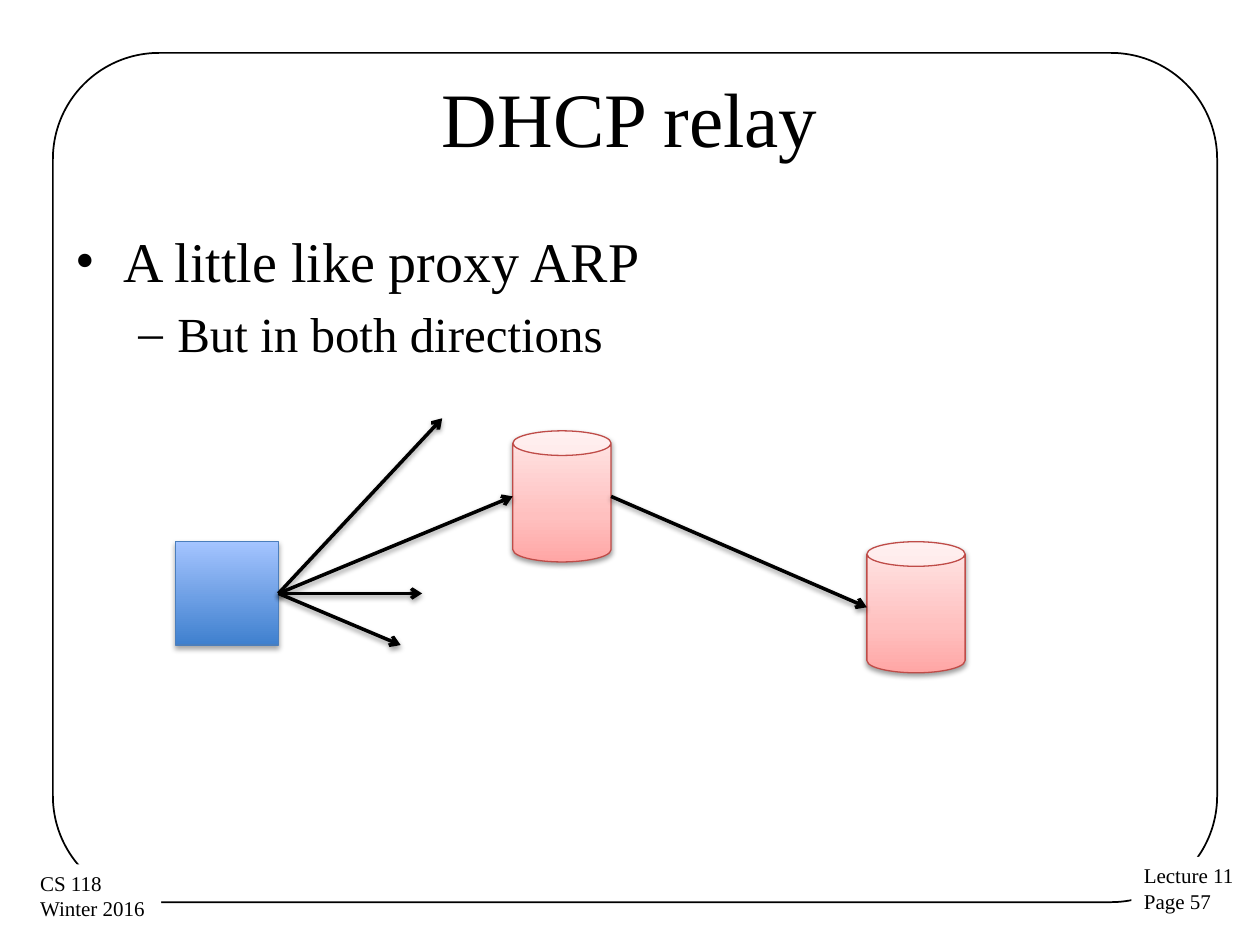
from dataclasses import dataclass

import lxml.etree
import pptx
import pptx.dml.color
import pptx.enum.shapes
import pptx.enum.text
import pptx.oxml.ns
import pptx.util
from pptx.util import Inches

RGBColor = pptx.dml.color.RGBColor
ShapeKind = pptx.enum.shapes.MSO_SHAPE
qn = pptx.oxml.ns.qn

BLACK = RGBColor(0x00, 0x00, 0x00)
WHITE = RGBColor(0xFF, 0xFF, 0xFF)
CLIENT_LINE = RGBColor(0x4B, 0x7E, 0xBC)
SERVER_LINE = RGBColor(0xBF, 0x4C, 0x48)
CLIENT_STOPS = ((0, RGBColor(0x3F, 0x80, 0xCE)), (100, RGBColor(0xA4, 0xC4, 0xFF)))
SERVER_STOPS = (
    (0, RGBColor(0xFF, 0xA6, 0xA5)),
    (35, RGBColor(0xFF, 0xC0, 0xBF)),
    (100, RGBColor(0xFF, 0xE7, 0xE7)),
)
FONT = "Times New Roman"


@dataclass(frozen=True)
class Node:
    kind: int
    left: float
    top: float
    width: float
    height: float
    stops: tuple
    line: RGBColor
    shadow_opacity: int
    shadow_distance: float

    @property
    def left_side(self) -> tuple[float, float]:
        return self.left, self.top + self.height / 2

    @property
    def right_side(self) -> tuple[float, float]:
        return self.left + self.width, self.top + self.height / 2


@dataclass(frozen=True)
class Label:
    left: float
    top: float
    width: float
    lines: tuple[str, ...]


@dataclass(frozen=True)
class Bullet:
    text: str
    size: int
    symbol: str
    margin: float
    indent: float
    level: int


def server(left: float, top: float) -> Node:
    return Node(ShapeKind.CAN, left, top, 0.78, 1.04, SERVER_STOPS, SERVER_LINE, 38, 1.6)


CLIENT = Node(ShapeKind.RECTANGLE, 1.39, 4.3, 0.82, 0.82, CLIENT_STOPS, CLIENT_LINE, 35, 1.8)
RELAY = server(4.07, 3.42)
DHCP_SERVER = server(6.88, 4.3)
BROADCAST_ENDS = ((3.51, 3.32), RELAY.left_side, (3.18, 5.12), (3.35, 4.71))
ARROWS = [(CLIENT.right_side, end) for end in BROADCAST_ENDS]
ARROWS.append((RELAY.right_side, DHCP_SERVER.left_side))
LABELS = (
    Label(8.98, 6.8, 0.92, ("Lecture 11", "Page 57")),
    Label(0.22, 6.86, 1.06, ("CS 118", "Winter 2016")),
)
BULLETS = (
    Bullet("A little like proxy ARP", 32, "•", 0.38, -0.38, 0),
    Bullet("But in both directions", 28, "–", 0.81, -0.31, 1),
)


def add_run(paragraph, text: str, size: int) -> None:
    run = paragraph.add_run()
    run.text = text
    run.font.name = FONT
    run.font.size = pptx.util.Pt(size)
    run.font.color.rgb = BLACK


def next_paragraph(frame, index: int):
    return frame.add_paragraph() if index else frame.paragraphs[0]


def add_color(parent, color: RGBColor):
    return lxml.etree.SubElement(parent, qn("a:srgbClr"), val=str(color))


def add_shadow(effects, opacity: int, distance: float) -> None:
    shadow = lxml.etree.SubElement(
        effects, qn("a:outerShdw"), blurRad=str(pptx.util.Pt(3.1)),
        dist=str(pptx.util.Pt(distance)), dir="5400000", rotWithShape="0")
    color = add_color(shadow, BLACK)
    lxml.etree.SubElement(color, qn("a:alpha"), val=str(opacity * 1000))


def add_frame(slide) -> None:
    shape = slide.shapes.add_shape(
        ShapeKind.ROUNDED_RECTANGLE, Inches(0.42), Inches(0.42), Inches(9.24), Inches(6.74))
    shape.adjustments[0] = 0.125
    shape.shadow.inherit = False
    shape.fill.background()
    shape.line.color.rgb = BLACK
    shape.line.width = pptx.util.Pt(1)


def add_label(slide, label: Label) -> None:
    shape = slide.shapes.add_textbox(
        Inches(label.left), Inches(label.top), Inches(label.width), Inches(0.51))
    shape.fill.solid()
    shape.fill.fore_color.rgb = WHITE
    frame = shape.text_frame
    frame.word_wrap = False
    frame.auto_size = pptx.enum.text.MSO_AUTO_SIZE.SHAPE_TO_FIT_TEXT
    for index, line in enumerate(label.lines):
        add_run(next_paragraph(frame, index), line, 12)


def add_title(slide, text: str) -> None:
    title = slide.shapes.title
    title.left, title.top = Inches(0.5), Inches(0.3)
    title.width, title.height = Inches(9), Inches(1.25)
    title.text_frame.vertical_anchor = pptx.enum.text.MSO_ANCHOR.MIDDLE
    paragraph = title.text_frame.paragraphs[0]
    paragraph.alignment = pptx.enum.text.PP_ALIGN.CENTER
    add_run(paragraph, text, 44)


def add_bullets(slide, bullets: tuple[Bullet, ...]) -> None:
    shape = slide.shapes.add_textbox(Inches(0.5), Inches(1.75), Inches(9), Inches(4.95))
    frame = shape.text_frame
    frame.word_wrap = True
    for index, bullet in enumerate(bullets):
        paragraph = next_paragraph(frame, index)
        paragraph.level = bullet.level
        paragraph.space_before = pptx.util.Pt(bullet.size * 0.2)
        add_run(paragraph, bullet.text, bullet.size)
        properties = paragraph._p.get_or_add_pPr()
        properties.set("marL", str(Inches(bullet.margin)))
        properties.set("indent", str(Inches(bullet.indent)))
        lxml.etree.SubElement(properties, qn("a:buFont"), typeface=FONT)
        lxml.etree.SubElement(properties, qn("a:buChar"), char=bullet.symbol)


def add_node(slide, node: Node) -> None:
    shape = slide.shapes.add_shape(
        node.kind, Inches(node.left), Inches(node.top), Inches(node.width), Inches(node.height))
    shape.fill.gradient()
    shape.fill.gradient_angle = 90
    stop_list = shape._element.spPr.find(qn("a:gradFill")).find(qn("a:gsLst"))
    for stop in list(stop_list):
        stop_list.remove(stop)
    for position, color in node.stops:
        stop = lxml.etree.SubElement(stop_list, qn("a:gs"), pos=str(position * 1000))
        add_color(stop, color)
    shape.line.color.rgb = node.line
    shape.line.width = pptx.util.Pt(0.75)
    shape.shadow.inherit = False
    effects = shape._element.spPr.find(qn("a:effectLst"))
    add_shadow(effects, node.shadow_opacity, node.shadow_distance)


def add_arrow(slide, start: tuple[float, float], end: tuple[float, float]) -> None:
    connector = slide.shapes.add_connector(
        pptx.enum.shapes.MSO_CONNECTOR.STRAIGHT, *(Inches(value) for value in start + end))
    connector.line.color.rgb = BLACK
    connector.line.width = pptx.util.Pt(2)
    properties = connector._element.spPr
    lxml.etree.SubElement(properties.find(qn("a:ln")), qn("a:tailEnd"), type="arrow")
    add_shadow(lxml.etree.SubElement(properties, qn("a:effectLst")), 38, 1.6)


def main() -> None:
    presentation = pptx.Presentation()
    presentation.slide_width, presentation.slide_height = Inches(10), Inches(7.5)
    slide = presentation.slides.add_slide(presentation.slide_layouts.get_by_name("Title Only"))
    add_frame(slide)
    for label in LABELS:
        add_label(slide, label)
    add_title(slide, "DHCP relay")
    add_bullets(slide, BULLETS)
    for node in (CLIENT, RELAY, DHCP_SERVER):
        add_node(slide, node)
    for start, end in ARROWS:
        add_arrow(slide, start, end)
    presentation.save("out.pptx")


if __name__ == "__main__":
    main()
